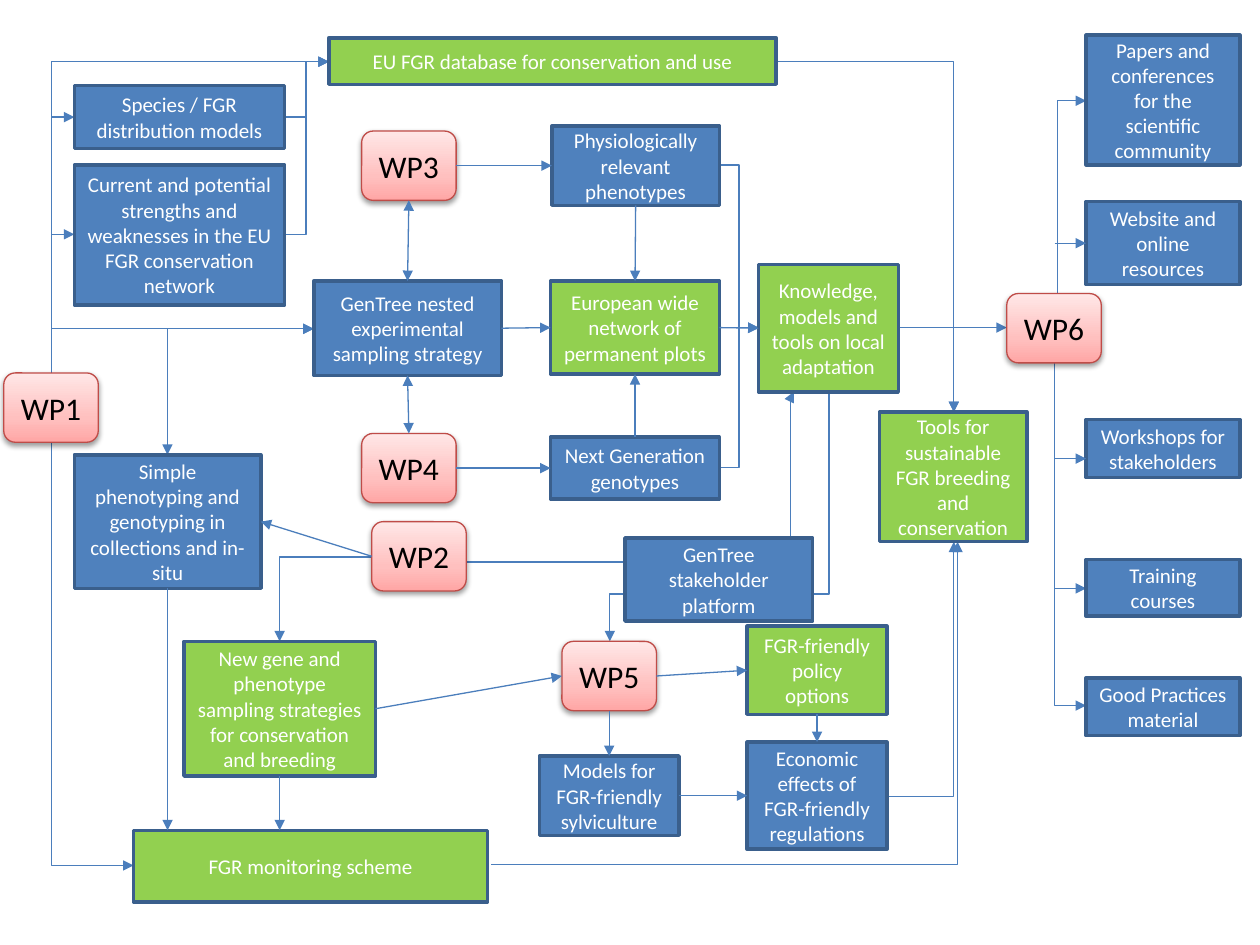
from copy import deepcopy

from lxml import etree
from pptx import Presentation
from pptx.dml.color import RGBColor
from pptx.enum.shapes import MSO_CONNECTOR, MSO_SHAPE
from pptx.enum.text import MSO_ANCHOR, PP_ALIGN
from pptx.oxml.ns import qn
from pptx.util import Inches, Pt

RECTANGLE = MSO_SHAPE.RECTANGLE
ROUNDED = MSO_SHAPE.ROUNDED_RECTANGLE
STRAIGHT = MSO_CONNECTOR.STRAIGHT
ELBOW = MSO_CONNECTOR.ELBOW
CENTER = PP_ALIGN.CENTER
MIDDLE = MSO_ANCHOR.MIDDLE

FONT = "Calibri"
BLUE, GREEN, BORDER, WIRE = "4F81BD", "92D050", "3A5F8C", "4B7EBC"
PACKAGE_BORDER = "BF4C48"
PACKAGE_GRADIENT = [(0, "FFA6A5"), (0.35, "FFC0BF"), (1, "FFE7E7")]
PACKAGE_SIZE = (0.75, 0.55)
TOP, LEFT, BOTTOM, RIGHT = range(4)

PACKAGES = {
    "WP1": (0.03, 2.96), "WP2": (2.95, 4.14), "WP3": (2.87, 1.04),
    "WP4": (2.87, 3.44), "WP5": (4.46, 5.09), "WP6": (7.99, 2.33),
}

BOXES = {
    "database": (GREEN, 2.61, 0.3, 3.55, 0.37, "EU FGR database for conservation and use"),
    "species": (BLUE, 0.59, 0.68, 1.67, 0.5, "Species / FGR distribution models"),
    "strengths": (BLUE, 0.59, 1.31, 1.67, 1.11,
                  "Current and potential strengths and weaknesses in the EU FGR conservation network"),
    "monitoring": (GREEN, 1.06, 6.59, 2.81, 0.57, "FGR monitoring scheme"),
    "sampling": (BLUE, 2.49, 2.23, 1.49, 0.75, "GenTree nested experimental sampling strategy"),
    "plots": (GREEN, 4.37, 2.23, 1.34, 0.74, "European wide network of permanent plots"),
    "phenotypes": (BLUE, 4.38, 1, 1.33, 0.63, "Physiologically relevant phenotypes"),
    "genotypes": (BLUE, 4.37, 3.47, 1.34, 0.49, "Next Generation genotypes"),
    "simple": (BLUE, 0.59, 3.61, 1.48, 1.06,
               "Simple phenotyping and genotyping in collections and in-situ"),
    "strategies": (GREEN, 1.46, 5.09, 1.52, 1.07,
                   "New gene and phenotype sampling strategies for conservation and breeding"),
    "platform": (BLUE, 4.96, 4.27, 1.49, 0.66, "GenTree stakeholder platform"),
    "sylviculture": (BLUE, 4.28, 6, 1.11, 0.63, "Models for FGR-friendly sylviculture"),
    "policy": (GREEN, 5.93, 4.97, 1.11, 0.7, "FGR-friendly policy options"),
    "economy": (BLUE, 5.93, 5.89, 1.11, 0.85, "Economic effects of FGR-friendly regulations"),
    "knowledge": (GREEN, 6.02, 2.1, 1.11, 1.01, "Knowledge, models and tools on local adaptation"),
    "tools": (GREEN, 6.98, 3.27, 1.17, 1.03, "Tools for sustainable FGR breeding and conservation"),
    "papers": (BLUE, 8.62, 0.28, 1.22, 1.03, "Papers and conferences for the scientific community"),
    "website": (BLUE, 8.62, 1.6, 1.22, 0.66, "Website and online resources"),
    "workshops": (BLUE, 8.62, 3.33, 1.22, 0.46, "Workshops for stakeholders"),
    "training": (BLUE, 8.62, 4.44, 1.22, 0.45, "Training courses"),
    "practices": (BLUE, 8.62, 5.38, 1.22, 0.46, "Good Practices material"),
}

ARROWS = [
    (("WP3", RIGHT), ("phenotypes", LEFT)),
    (("WP4", RIGHT), ("genotypes", LEFT)),
    (("phenotypes", BOTTOM), ("plots", TOP)),
    (("genotypes", TOP), ("plots", BOTTOM)),
    (("sampling", RIGHT), ("plots", LEFT)),
    (("plots", RIGHT), ("knowledge", LEFT)),
    (("WP2", LEFT), ("simple", RIGHT)),
    (("simple", BOTTOM), (1.33, 6.59)),
    (("strategies", BOTTOM), (2.22, 6.59)),
    (("strategies", RIGHT), ("WP5", LEFT)),
    (("WP5", BOTTOM), ("sylviculture", TOP)),
    (("WP5", RIGHT), ("policy", LEFT)),
    (("sylviculture", RIGHT), ("economy", LEFT)),
    (("policy", BOTTOM), ("economy", TOP)),
    ((8.37, 3.64), (8.62, 3.64)),
    ((8.37, 1.93), ("website", LEFT)),
]
DOUBLE_ARROWS = [
    (("sampling", TOP), ("WP3", BOTTOM)),
    (("WP4", TOP), ("sampling", BOTTOM)),
]

ACROSS_THEN_ALONG = [
    ((6.16, 0.49), (7.57, 3.27)), ((2.95, 4.42), (2.22, 5.09)),
    ((7.04, 6.32), (7.57, 4.3)), ((3.9, 6.86), (7.6, 4.3)),
    ((7.13, 2.6), (7.57, 3.27)),
]
ALONG_THEN_ACROSS = [
    *(((0.41, 2.96), end) for end in [(2.49, 2.61), (2.61, 0.49), (0.59, 1.86), (0.59, 0.93)]),
    *(((8.37, 2.88), end) for end in [(8.62, 4.67), (8.62, 5.6)]),
    ((0.41, 3.51), (1.06, 6.87)), ((7.57, 3.11), (7.99, 2.6)),
]
STEPS = [
    ((7.99, 2.61), (8.62, 0.8), 0.64), ((2.25, 0.93), (2.61, 0.49), 0.5),
    ((2.25, 1.86), (2.61, 0.49), 0.5), ((5.71, 3.71), (6.02, 2.6), 0.5),
    ((5.71, 1.31), (6.02, 2.6), 0.5), ((3.66, 4.46), (6.3, 3.11), 0.99),
]


def color(value):
    return RGBColor.from_string(value)


def set_text(shape, text, size, font_color):
    frame = shape.text_frame
    frame.text = text
    frame.word_wrap = True
    frame.vertical_anchor = MIDDLE
    paragraph = frame.paragraphs[0]
    paragraph.alignment = CENTER
    font = paragraph.runs[0].font
    font.name, font.size = FONT, Pt(size)
    font.color.rgb = color(font_color)


def add_block(slide, kind, bounds, border, width):
    shape = slide.shapes.add_shape(kind, *map(Inches, bounds))
    shape.shadow.inherit = False
    shape.line.color.rgb = color(border)
    shape.line.width = Pt(width)
    return shape


def add_box(slide, fill, left, top, width, height, text):
    shape = add_block(slide, RECTANGLE, (left, top, width, height), BORDER, 2)
    shape.fill.solid()
    shape.fill.fore_color.rgb = color(fill)
    set_text(shape, text, 12, "FFFFFF")
    return shape


def add_package(slide, text, position):
    shape = add_block(slide, ROUNDED, (*position, *PACKAGE_SIZE), PACKAGE_BORDER, 0.75)
    shape.fill.gradient()
    shape.fill.gradient_angle = 90
    properties = shape._element.spPr
    stop_list = properties.find(qn("a:gradFill")).find(qn("a:gsLst"))
    stop_list.append(deepcopy(stop_list[0]))
    for stop, (offset, value) in zip(shape.fill.gradient_stops, PACKAGE_GRADIENT):
        stop.position = offset
        stop.color.rgb = color(value)
    shadow = etree.SubElement(
        properties.find(qn("a:effectLst")), qn("a:outerShdw"),
        blurRad=str(Pt(3.1)), dist=str(Pt(1.6)), dir="5400000", rotWithShape="0")
    shade = etree.SubElement(shadow, qn("a:srgbClr"), val="000000")
    etree.SubElement(shade, qn("a:alpha"), val="38000")
    set_text(shape, text, 18, "000000")
    return shape


def add_wire(slide, kind, begin, end, heads):
    connector = slide.shapes.add_connector(kind, *map(Inches, (*begin, *end)))
    connector.line.color.rgb = color(WIRE)
    connector.line.width = Pt(0.75)
    line = connector.line._get_or_add_ln()
    for head in heads:
        etree.SubElement(line, qn(f"a:{head}"), type="triangle")
    etree.SubElement(connector._element.spPr, qn("a:effectLst"))
    return connector


def add_arrow(slide, shapes, begin, end, heads=("tailEnd",)):
    points = [(0, 0) if point[0] in shapes else point for point in (begin, end)]
    connector = add_wire(slide, STRAIGHT, *points, heads)
    for point, connect in ((begin, connector.begin_connect), (end, connector.end_connect)):
        if point[0] in shapes:
            connect(shapes[point[0]], point[1])


def add_corner(slide, begin, end, heads=("tailEnd",)):
    connector = add_wire(slide, ELBOW, begin, end, heads)
    connector._element.spPr.find(qn("a:prstGeom")).set("prst", "bentConnector2")


def add_step(slide, begin, end, bend):
    connector = add_wire(slide, ELBOW, begin, end, ["tailEnd"])
    geometry = connector._element.spPr.find(qn("a:prstGeom"))
    adjustments = geometry.find(qn("a:avLst"))
    etree.SubElement(adjustments, qn("a:gd"), name="adj1", fmla=f"val {round(bend * 100000)}")
    return connector


def main():
    presentation = Presentation()
    presentation.slide_width, presentation.slide_height = Inches(10), Inches(7.5)
    slide = presentation.slides.add_slide(presentation.slide_layouts[6])
    for begin, end in ACROSS_THEN_ALONG:
        add_corner(slide, begin, end)
    for begin, end in ALONG_THEN_ACROSS:
        add_corner(slide, end, begin, ["headEnd"])
    add_corner(slide, (2.49, 2.61), (1.33, 3.61), ["headEnd", "tailEnd"])
    for begin, end, bend in STEPS:
        add_step(slide, begin, end, bend)
    feedback = add_step(slide, (4.72, 3.23), (6.7, 4.97), 0.81)
    feedback._element.spPr.find(qn("a:xfrm")).set("rot", "5400000")
    shapes = {name: add_box(slide, *box) for name, box in BOXES.items()}
    for name, position in PACKAGES.items():
        shapes[name] = add_package(slide, name, position)
    for begin, end in ARROWS:
        add_arrow(slide, shapes, begin, end)
    for begin, end in DOUBLE_ARROWS:
        add_arrow(slide, shapes, begin, end, ["headEnd", "tailEnd"])
    presentation.save("out.pptx")


if __name__ == "__main__":
    main()
